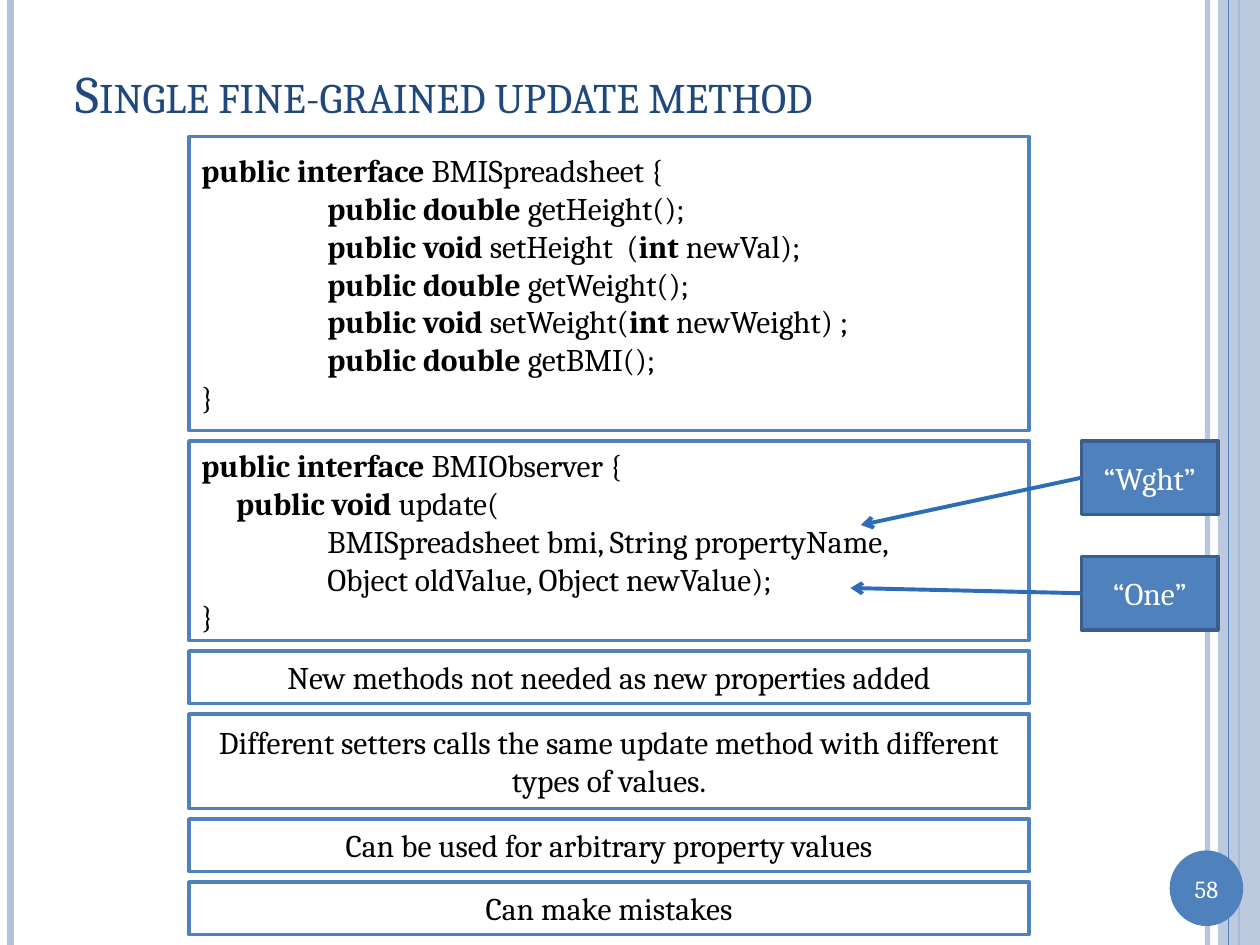
from dataclasses import dataclass
from typing import Optional

from lxml.etree import SubElement
from pptx import Presentation
from pptx.dml.color import RGBColor
from pptx.enum.shapes import MSO_CONNECTOR as Connector, MSO_SHAPE as Shape
from pptx.enum.text import MSO_ANCHOR as Anchor, PP_ALIGN as Align
from pptx.oxml.ns import qn
from pptx.util import Emu, Pt

EMU_PER_PX = 7620  # 120 px to the inch
PAGE_WIDTH, PAGE_HEIGHT = 1200, 900


@dataclass(frozen=True)
class Theme:
    font: str = "Cambria"
    title_size: int = 30
    body_size: int = 18
    number_size: int = 14
    title: str = "1F497D"
    text: str = "000000"
    paper: str = "FFFFFF"
    accent: str = "4F81BD"
    accent_dark: str = "3A5F8C"
    arrow: str = "2C6CB9"
    pale: str = "B3C1DB"
    border: float = 2
    arrow_width: float = 2.25


@dataclass(frozen=True)
class Area:
    left: int
    top: int
    width: int
    height: int


@dataclass(frozen=True)
class Span:
    text: str
    bold: bool = False


@dataclass(frozen=True)
class Line:
    spans: tuple[Span, ...]
    indent: int = 0


@dataclass(frozen=True)
class Panel:
    height: int
    lines: tuple[Line, ...]
    align: Align = Align.LEFT


@dataclass(frozen=True)
class Callout:
    text: str
    top: int
    target: tuple[int, int]


@dataclass(frozen=True)
class Rule:
    x: int
    color: str
    width: float
    opacity: int = 100


THEME = Theme()
TAB = 120


def code(*parts: str, indent: int = 0) -> Line:
    """Parts alternate between bold keywords and plain text."""
    return Line(tuple(Span(part, i % 2 == 0) for i, part in enumerate(parts)), indent)


def plain(text: str, indent: int = 0) -> Line:
    return Line((Span(text),), indent)


def note(height: int, text: str) -> Panel:
    return Panel(height, (plain(text),), Align.CENTER)


# Content
PANELS = (
    Panel(280, (
        code("public interface ", "BMISpreadsheet {"),
        code("public double ", "getHeight();", indent=TAB),
        code("public void ", "setHeight  (", "int ", "newVal);", indent=TAB),
        code("public double ", "getWeight();", indent=TAB),
        code("public void ", "setWeight(", "int ", "newWeight) ;", indent=TAB),
        code("public double ", "getBMI();", indent=TAB),
        plain("}"),
    )),
    Panel(190, (
        code("public interface ", "BMIObserver {"),
        code("public void", " update(", indent=33),
        plain("BMISpreadsheet bmi, String propertyName,\v"
              "Object oldValue, Object newValue);", TAB),
        plain("}"),
    )),
    note(50, "New methods not needed as new properties added"),
    note(90, "Different setters calls the same update method with different types of values."),
    note(50, "Can be used for arbitrary property values"),
    note(50, "Can make mistakes"),
)
CALLOUTS = (Callout("“Wght”", 420, (820, 500)), Callout("“One”", 530, (810, 560)))
RULES_BELOW = (Rule(1150, THEME.pale, 3, 93), Rule(10, THEME.pale, 4.5),
               Rule(1180, THEME.accent, 1.5))
RULE_ABOVE = Rule(1170, THEME.accent, 0.75)


def px(value: int) -> Emu:
    return Emu(value * EMU_PER_PX)


def place(area: Area) -> tuple[Emu, ...]:
    return px(area.left), px(area.top), px(area.width), px(area.height)


def set_opacity(part, percent: int) -> None:
    for color in part.iter(qn("a:srgbClr")):
        SubElement(color, qn("a:alpha")).set("val", str(percent * 1000))


def add_block(page, area: Area, fill: str, line: Optional[str] = None, kind=Shape.RECTANGLE):
    block = page.shapes.add_shape(kind, *place(area))
    block.shadow.inherit = False
    block.fill.solid()
    block.fill.fore_color.rgb = RGBColor.from_string(fill)
    if line:
        block.line.color.rgb = RGBColor.from_string(line)
        block.line.width = Pt(THEME.border)
    else:
        block.line.fill.background()
    return block


def add_line(page, start: tuple[int, int], end: tuple[int, int], color: str, width: float):
    line = page.shapes.add_connector(Connector.STRAIGHT, *map(px, start + end))
    line.line.color.rgb = RGBColor.from_string(color)
    line.line.width = Pt(width)
    SubElement(line._element.spPr, qn("a:effectLst"))
    return line


def add_rule(page, rule: Rule) -> None:
    line = add_line(page, (rule.x, 0), (rule.x, PAGE_HEIGHT), rule.color, rule.width)
    if rule.opacity < 100:
        set_opacity(line._element.spPr, rule.opacity)


def write(box, lines: tuple[Line, ...], size: int, color: str, align=Align.CENTER) -> None:
    frame = box.text_frame
    frame.word_wrap = True
    frame.vertical_anchor = Anchor.MIDDLE
    frame.text = "\n".join("".join(span.text for span in line.spans[:1]) for line in lines)
    for paragraph, line in zip(frame.paragraphs, lines):
        paragraph.alignment = align
        if line.indent:
            paragraph._p.get_or_add_pPr().set("marL", str(px(line.indent)))
        for span in line.spans[1:]:
            paragraph.add_run().text = span.text
        bold_runs = {span.text for span in line.spans if span.bold}
        for run in paragraph.runs:
            run.font.name = THEME.font
            run.font.size = Pt(size)
            run.font.bold = run.text in bold_runs
            run.font.color.rgb = RGBColor.from_string(color)


def add_text(page, area: Area, text: str, size: int, color: str, align=Align.CENTER):
    box = page.shapes.add_textbox(*place(area))
    write(box, (plain(text),), size, color, align)
    return box


def add_callout(page, callout: Callout) -> None:
    area = Area(1030, callout.top, 130, 70)
    box = add_block(page, area, THEME.accent, THEME.accent_dark)
    write(box, (plain(callout.text),), THEME.body_size, THEME.paper)
    start = (area.left, area.top + area.height // 2)
    arrow = add_line(page, start, callout.target, THEME.arrow, THEME.arrow_width)
    SubElement(arrow.line._get_or_add_ln(), qn("a:tailEnd")).set("type", "arrow")


def main() -> None:
    deck = Presentation()
    deck.slide_width, deck.slide_height = px(PAGE_WIDTH), px(PAGE_HEIGHT)
    page = deck.slides.add_slide(deck.slide_layouts[6])

    # Side bands and page number
    for rule in RULES_BELOW:
        add_rule(page, rule)
    band = add_block(page, Area(1160, 0, 40, PAGE_HEIGHT), THEME.pale)
    set_opacity(band._element.spPr, 87)
    add_rule(page, RULE_ABOVE)
    add_block(page, Area(1114, 810, 70, 72), THEME.accent, kind=Shape.OVAL)
    add_text(page, Area(1114, 826, 70, 40), "58", THEME.number_size, THEME.paper)

    # Title in small capitals
    title = add_text(page, Area(60, 36, 1040, 104), "Single fine-grained update method",
                     THEME.title_size, THEME.title, Align.LEFT)
    title.text_frame.paragraphs[0].runs[0]._r.get_or_add_rPr().set("cap", "small")

    # Stacked panels
    top, gap = 130, 10
    for panel in PANELS:
        box = add_block(page, Area(180, top, 800, panel.height), THEME.paper, THEME.accent)
        write(box, panel.lines, THEME.body_size, THEME.text, panel.align)
        top += panel.height + gap

    # Example values pointing at the parameters
    for callout in CALLOUTS:
        add_callout(page, callout)

    deck.save("out.pptx")


if __name__ == "__main__":
    main()
